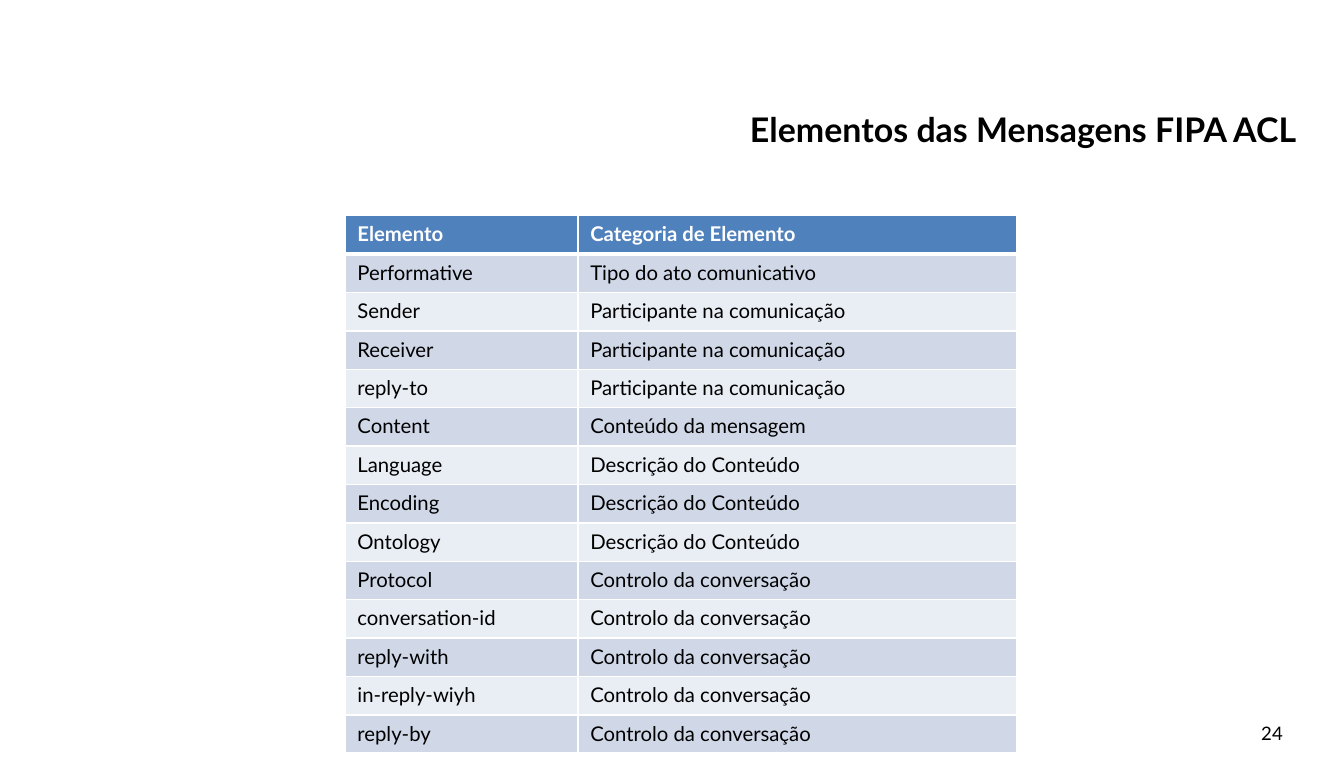
from dataclasses import dataclass

import pptx
import pptx.dml.color
import pptx.enum.text
import pptx.oxml
import pptx.oxml.ns
import pptx.slide
import pptx.table
import pptx.text.text
import pptx.util

Pt = pptx.util.Pt
RGBColor = pptx.dml.color.RGBColor
Align = pptx.enum.text.PP_ALIGN
Anchor = pptx.enum.text.MSO_ANCHOR

FONT = "Lato"
BLACK = RGBColor(0x00, 0x00, 0x00)
WHITE = RGBColor(0xFF, 0xFF, 0xFF)
HEADER_BLUE = RGBColor(0x4F, 0x81, 0xBD)
BAND_DARK = RGBColor(0xD0, 0xD8, 0xE8)
BAND_LIGHT = RGBColor(0xE9, 0xED, 0xF4)

TABLE_LEFT, TABLE_TOP = 203.8, 127.4
COLUMN_WIDTHS = (137.5, 259.2)
ROW_HEIGHT = 22.68


@dataclass(frozen=True)
class MessageElement:
    name: str
    category: str


HEADER = MessageElement("Elemento", "Categoria de Elemento")
ELEMENTS = [
    MessageElement("Performative", "Tipo do ato comunicativo"),
    MessageElement("Sender", "Participante na comunicação"),
    MessageElement("Receiver", "Participante na comunicação"),
    MessageElement("reply-to", "Participante na comunicação"),
    MessageElement("Content", "Conteúdo da mensagem"),
    MessageElement("Language", "Descrição do Conteúdo"),
    MessageElement("Encoding", "Descrição do Conteúdo"),
    MessageElement("Ontology", "Descrição do Conteúdo"),
    MessageElement("Protocol", "Controlo da conversação"),
    MessageElement("conversation-id", "Controlo da conversação"),
    MessageElement("reply-with", "Controlo da conversação"),
    MessageElement("in-reply-wiyh", "Controlo da conversação"),
    MessageElement("reply-by", "Controlo da conversação"),
]


def write_text(frame: pptx.text.text.TextFrame, text: str, *, size: float = 12,
               color: RGBColor = BLACK, bold: bool = False,
               align: Align = Align.LEFT) -> None:
    para = frame.paragraphs[0]
    para.alignment = align
    span = para.add_run()
    span.text = text
    span.font.name = FONT
    span.font.size = Pt(size)
    span.font.bold = bold
    span.font.color.rgb = color


def add_text_box(page: pptx.slide.Slide, left: float, top: float, width: float,
                 height: float, *, margin_x: float = 0, margin_y: float = 0,
                 anchor: Anchor = Anchor.TOP) -> pptx.text.text.TextFrame:
    box = page.shapes.add_textbox(Pt(left), Pt(top), Pt(width), Pt(height))
    frame = box.text_frame
    frame.word_wrap = True
    frame.vertical_anchor = anchor
    frame.margin_left = frame.margin_right = Pt(margin_x)
    frame.margin_top = frame.margin_bottom = Pt(margin_y)
    return frame


def set_borders(cell: pptx.table._Cell, top: float, bottom: float) -> None:
    """Draw white cell borders; the side borders are 1 point wide."""
    properties = cell._tc.get_or_add_tcPr()
    sides = (("lnL", 1), ("lnR", 1), ("lnT", top), ("lnB", bottom))
    for position, (side, width) in enumerate(sides):
        border = pptx.oxml.parse_xml(
            f'<a:{side} {pptx.oxml.ns.nsdecls("a")} w="{Pt(width)}">'
            f'<a:solidFill><a:srgbClr val="{WHITE}"/></a:solidFill></a:{side}>')
        properties.insert(position, border)


def add_element_table(page: pptx.slide.Slide) -> None:
    rows = [HEADER, *ELEMENTS]
    table = page.shapes.add_table(
        len(rows), len(COLUMN_WIDTHS), Pt(TABLE_LEFT), Pt(TABLE_TOP),
        Pt(sum(COLUMN_WIDTHS)), Pt(ROW_HEIGHT * len(rows))).table
    for column, width in zip(table.columns, COLUMN_WIDTHS):
        column.width = Pt(width)
    for index, element in enumerate(rows):
        table.rows[index].height = Pt(ROW_HEIGHT)
        is_header = index == 0
        band = BAND_DARK if index % 2 else BAND_LIGHT
        for column, text in enumerate((element.name, element.category)):
            cell = table.cell(index, column)
            cell.fill.solid()
            cell.fill.fore_color.rgb = HEADER_BLUE if is_header else band
            set_borders(cell, top=3 if index == 1 else 1, bottom=3 if is_header else 1)
            write_text(cell.text_frame, text, bold=is_header,
                       color=WHITE if is_header else BLACK)


def main() -> None:
    deck = pptx.Presentation()
    deck.slide_width, deck.slide_height = Pt(793.44), Pt(453.6)
    page = deck.slides.add_slide(deck.slide_layouts[6])

    page_number = add_text_box(page, 580.3, 420.5, 185, 24.5, margin_x=7.9,
                               margin_y=4, anchor=Anchor.MIDDLE)
    write_text(page_number, "24", size=11, align=Align.RIGHT)
    title = add_text_box(page, 113, 64.1, 652.3, 56.9)
    write_text(title, "Elementos das Mensagens FIPA ACL", size=20, bold=True,
               align=Align.RIGHT)
    add_element_table(page)
    deck.save("out.pptx")


if __name__ == "__main__":
    main()
